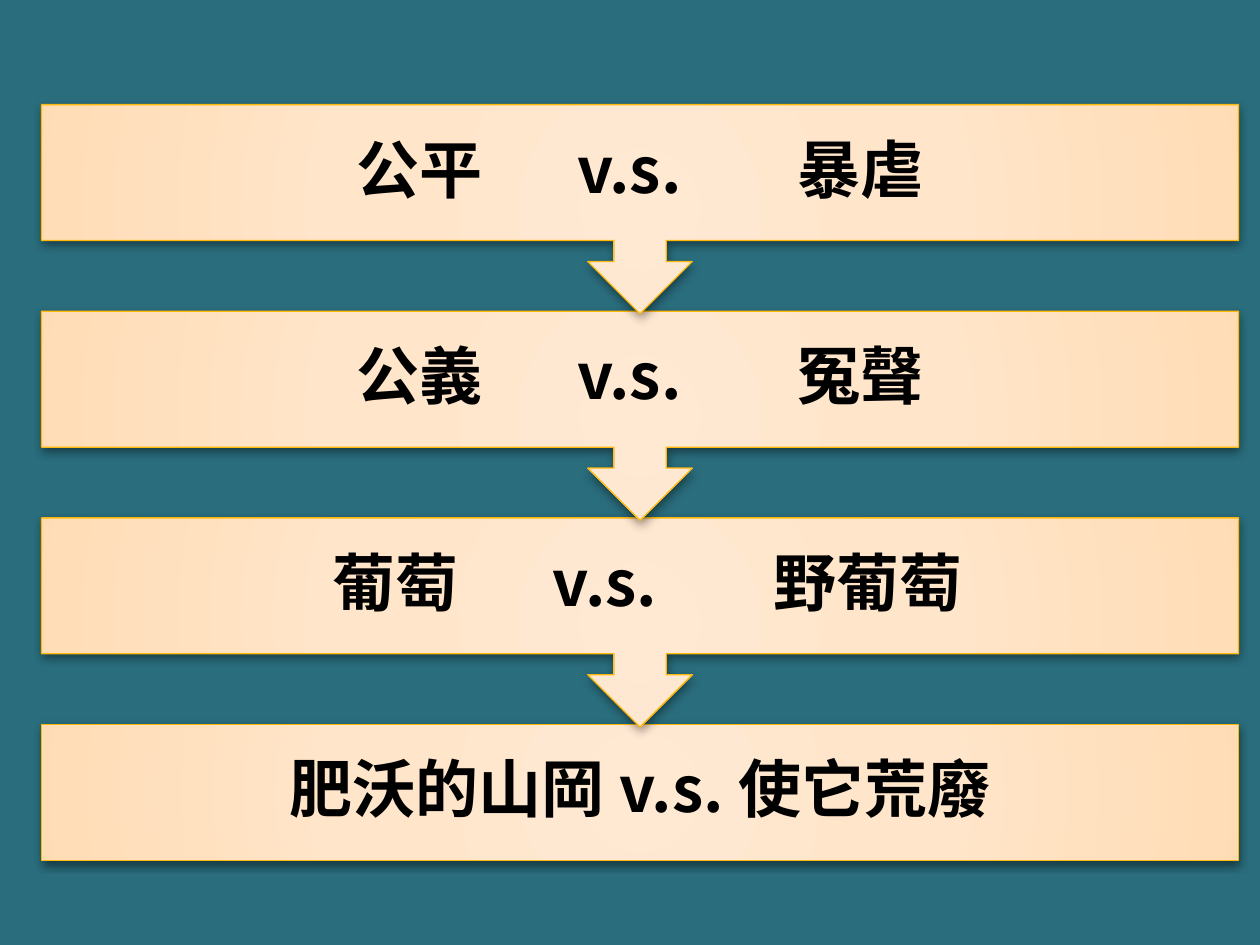
from dataclasses import dataclass

from lxml import etree
from pptx import Presentation
from pptx.dml.color import RGBColor
from pptx.enum.shapes import MSO_SHAPE as Shape
from pptx.enum.text import MSO_ANCHOR as Anchor, PP_ALIGN as Align
from pptx.oxml import parse_xml
from pptx.oxml.ns import nsdecls, qn
from pptx.util import Inches, Pt

FONT = "Noto Sans CJK SC"
BACKGROUND, GOLD, BLACK = "2A6D7D", "FEB80A", "000000"
GRADIENT = [(0, "FFE9D3"), (50, "FFE5C9"), (97, "FFDDB7"), (100, "FFDBB2")]

LEFT, TOP, WIDTH = 0.33, 0.83, 9.5
BAR_HEIGHT, CALLOUT_HEIGHT, PITCH = 1.08, 1.66, 1.64
PADDING, TAB_STEP = 0.28, 1.75


@dataclass
class Contrast:
    text: str
    leads_on: bool = True


CONTRASTS = [
    Contrast("公平\tv.s.\t暴虐"),
    Contrast("公義\tv.s.\t冤聲"),
    Contrast(" 葡萄\t v.s.\t 野葡萄"),
    Contrast("肥沃的山岡 v.s. 使它荒廢", leads_on=False),
]


def color(hex_value: str) -> RGBColor:
    return RGBColor.from_string(hex_value)


def add_radial_fill(shape) -> None:
    """Fill the shape with a gradient that spreads from its centre."""
    stops = "".join(
        f'<a:gs pos="{percent * 1000}"><a:srgbClr val="{value}"/></a:gs>'
        for percent, value in GRADIENT
    )
    gradient = parse_xml(
        f'<a:gradFill {nsdecls("a")} rotWithShape="1"><a:gsLst>{stops}</a:gsLst>'
        '<a:path path="circle"><a:fillToRect l="50000" t="50000" r="50000" b="50000"/>'
        "</a:path></a:gradFill>"
    )
    shape.fill.background()
    properties = shape.element.spPr
    properties.replace(properties.find(qn("a:noFill")), gradient)


def add_soft_shadow(shape) -> None:
    shape.shadow.inherit = False
    effects = shape.element.spPr.find(qn("a:effectLst"))
    effects.append(parse_xml(
        f'<a:outerShdw {nsdecls("a")} blurRad="{Pt(5)}" dist="{Pt(2)}" dir="5400000" '
        f'rotWithShape="0"><a:srgbClr val="{BLACK}"><a:alpha val="43000"/></a:srgbClr>'
        "</a:outerShdw>"
    ))


def add_bar(shapes, top: float, leads_on: bool) -> None:
    """Draw a plain bar, or one whose arrow points down to the next."""
    kind = Shape.UP_ARROW_CALLOUT if leads_on else Shape.RECTANGLE
    height = CALLOUT_HEIGHT if leads_on else BAR_HEIGHT
    bar = shapes.add_shape(kind, Inches(LEFT), Inches(top), Inches(WIDTH), Inches(height))
    bar.rotation = 180 if leads_on else 0
    add_radial_fill(bar)
    bar.line.color.rgb = color(GOLD)
    bar.line.width = Pt(0.75)
    add_soft_shadow(bar)


def add_text(shapes, text: str, *, top: float, size: float = 36,
             bold: bool = True, font_color: str = BLACK) -> None:
    box = shapes.add_textbox(Inches(LEFT), Inches(top), Inches(WIDTH), Inches(BAR_HEIGHT))
    frame = box.text_frame
    frame.word_wrap = True
    frame.vertical_anchor = Anchor.MIDDLE
    frame.margin_left = frame.margin_right = Inches(PADDING)
    frame.margin_top = frame.margin_bottom = Inches(PADDING)
    paragraph = frame.paragraphs[0]
    paragraph.alignment = Align.CENTER
    paragraph.line_spacing = 0.9
    paragraph.space_after = Pt(size * 0.35)
    # The tab distance and the East Asian typeface have no public setters
    paragraph._p.get_or_add_pPr().set("defTabSz", str(Inches(TAB_STEP)))
    run = paragraph.add_run()
    run.text = text
    run.font.size, run.font.bold = Pt(size), bold
    run.font.color.rgb = color(font_color)
    run.font.name = FONT
    etree.SubElement(run.font._element, qn("a:ea"), typeface=FONT)


def main() -> None:
    presentation = Presentation()
    presentation.slide_width, presentation.slide_height = Inches(10), Inches(7.5)
    slide = presentation.slides.add_slide(presentation.slide_layouts[6])
    slide.background.fill.solid()
    slide.background.fill.fore_color.rgb = color(BACKGROUND)

    # Contrasts, bottom one first so that each arrow overlaps the bar below
    shapes = slide.shapes.add_group_shape().shapes
    for row, contrast in reversed(list(enumerate(CONTRASTS))):
        top = TOP + row * PITCH
        add_bar(shapes, top, contrast.leads_on)
        add_text(shapes, contrast.text, top=top)

    presentation.save("out.pptx")


if __name__ == "__main__":
    main()
